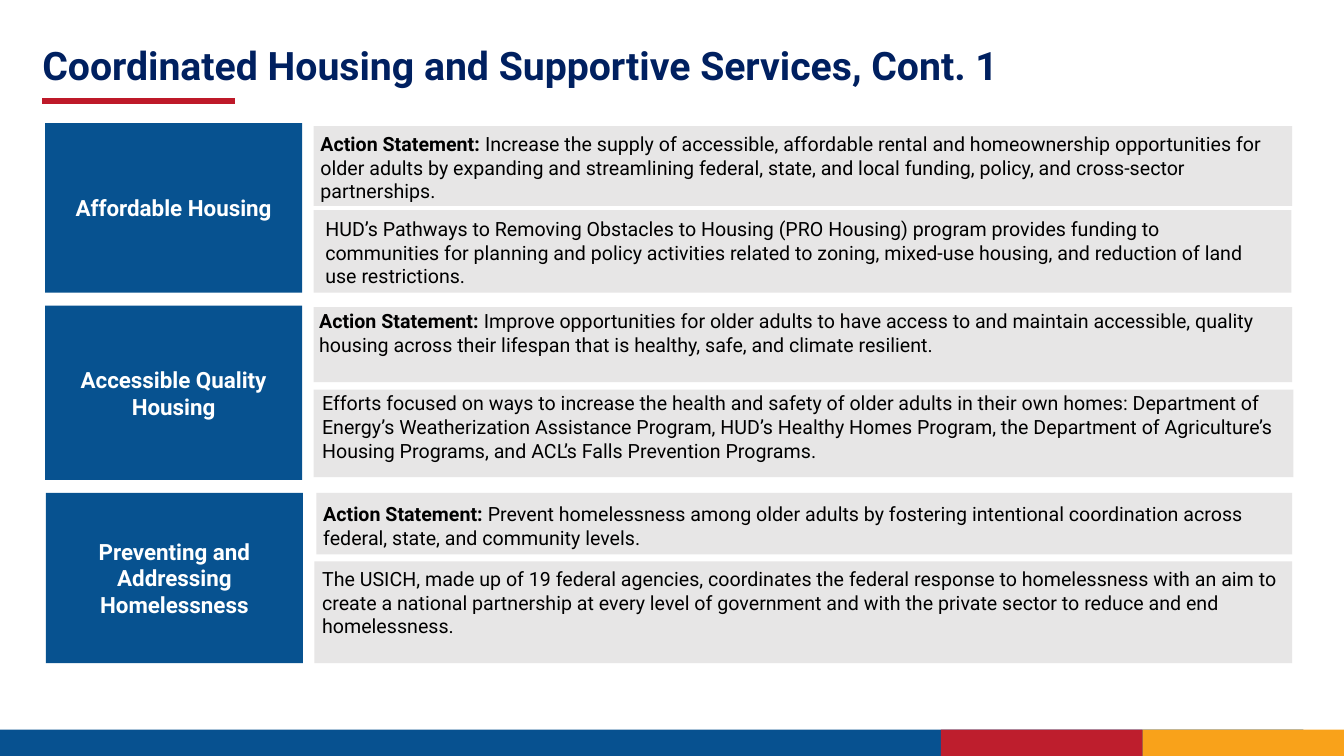
from dataclasses import dataclass
from typing import NamedTuple

from lxml import etree
from pptx import Presentation
from pptx.dml.color import RGBColor
from pptx.enum.shapes import MSO_CONNECTOR, MSO_SHAPE
from pptx.enum.text import MSO_ANCHOR, MSO_AUTO_SIZE, PP_ALIGN
from pptx.oxml.ns import qn
from pptx.shapes.autoshape import Shape
from pptx.slide import Slide
from pptx.text.text import Font
from pptx.util import Pt

RECTANGLE = MSO_SHAPE.RECTANGLE
STRAIGHT = MSO_CONNECTOR.STRAIGHT
MIDDLE = MSO_ANCHOR.MIDDLE
TOP = MSO_ANCHOR.TOP
CENTER = PP_ALIGN.CENTER
LEFT = PP_ALIGN.LEFT
NO_AUTOFIT = MSO_AUTO_SIZE.NONE
GROW_TO_FIT = MSO_AUTO_SIZE.SHAPE_TO_FIT_TEXT


@dataclass(frozen=True)
class Theme:
    font: str = "Roboto"
    title_size: float = 28
    label_size: float = 16
    body_size: float = 14
    title: str = "002060"
    underline: str = "BE1929"
    label: str = "075290"
    panel: str = "E7E6E6"
    footer_blue: str = "075190"
    footer_red: str = "BE1E2D"
    footer_gold: str = "F9A21A"
    white: str = "FFFFFF"
    black: str = "000000"


class Box(NamedTuple):
    """Left, top, width and height in points."""
    left: float
    top: float
    width: float
    height: float


@dataclass(frozen=True)
class Statement:
    panel: Box
    text_box: Box
    text: str
    lead: str = ""
    space_after: float = 0


@dataclass(frozen=True)
class Topic:
    label: str
    label_box: Box
    action: Statement
    example: Statement


THEME = Theme()
SLIDE_WIDTH, SLIDE_HEIGHT = 960, 540
ACTION_LEAD = "Action Statement: "
TITLE = "Coordinated Housing and Supportive Services, Cont. 1"
TITLE_BOX = Box(23, 15.1, 864, 66.2)
UNDERLINE_LEFT, UNDERLINE_RIGHT, UNDERLINE_TOP = 30.2, 168, 72

FOOTER_TOP, FOOTER_HEIGHT = 521.1, 19.2
FOOTER_BARS = [
    (0, 931, THEME.footer_blue),
    (816, 144, THEME.footer_gold),
    (672, 144, THEME.footer_red),
]

TOPICS = [
    Topic(
        "Affordable Housing",
        Box(32.2, 88, 183.6, 121),
        Statement(
            Box(224, 90, 699, 57), Box(221.8, 90.7, 695, 58.3),
            "Increase the supply of accessible, affordable rental and homeownership "
            "opportunities for older adults by expanding and streamlining federal, "
            "state, and local funding, policy, and cross-sector partnerships.",
            ACTION_LEAD),
        Statement(
            Box(224, 150, 698.4, 59), Box(225.3, 151.4, 695.5, 58.3),
            "HUD’s Pathways to Removing Obstacles to Housing (PRO Housing) program "
            "provides funding to communities for planning and policy activities "
            "related to zoning, mixed-use housing, and reduction of land use "
            "restrictions."),
    ),
    Topic(
        "Accessible Quality Housing",
        Box(32.2, 218.3, 183.6, 124.6),
        Statement(
            Box(224, 219.4, 699, 53.7), Box(220.9, 217.4, 700, 41),
            "Improve opportunities for older adults to have access to and maintain "
            "accessible, quality housing across their lifespan that is healthy, "
            "safe, and climate resilient.",
            ACTION_LEAD, space_after=6),
        Statement(
            Box(224, 278.4, 700, 62.4), Box(223, 276, 700.6, 58.3),
            "Efforts focused on ways to increase the health and safety of older "
            "adults in their own homes: Department of Energy’s Weatherization "
            "Assistance Program, HUD’s Healthy Homes Program, the Department of "
            "Agriculture’s Housing Programs, and ACL’s Falls Prevention Programs."),
    ),
    Topic(
        "Preventing and Addressing Homelessness",
        Box(32.8, 352, 183.6, 121.7),
        Statement(
            Box(226, 352, 697, 44), Box(223.8, 355, 697, 41),
            "Prevent homelessness among older adults by fostering intentional "
            "coordination across federal, state, and community levels.",
            ACTION_LEAD),
        Statement(
            Box(224.6, 401, 698.4, 72.7), Box(223, 401.6, 708.5, 58.3),
            "The USICH, made up of 19 federal agencies, coordinates the federal "
            "response to homelessness with an aim to create a national partnership "
            "at every level of government and with the private sector to reduce "
            "and end homelessness."),
    ),
]


def style_font(font: Font, size: float, color: str, bold: bool = False) -> None:
    font.name = THEME.font
    font.size = Pt(size)
    font.bold = bold
    font.color.rgb = RGBColor.from_string(color)


def add_rectangle(slide: Slide, box: Box, color: str) -> Shape:
    rectangle = slide.shapes.add_shape(RECTANGLE, *map(Pt, box))
    rectangle.shadow.inherit = False
    rectangle.fill.solid()
    rectangle.fill.fore_color.rgb = RGBColor.from_string(color)
    rectangle.line.fill.background()
    return rectangle


def add_title(slide: Slide) -> None:
    title = slide.shapes.title
    title.left, title.top, title.width, title.height = map(Pt, TITLE_BOX)
    frame = title.text_frame
    frame.text = TITLE
    frame.word_wrap = True
    frame.auto_size = NO_AUTOFIT
    frame.vertical_anchor = MIDDLE
    heading = frame.paragraphs[0]
    heading.alignment = LEFT
    heading.line_spacing = 0.9
    style_font(heading.runs[0].font, THEME.title_size, THEME.title, bold=True)


def add_underline(slide: Slide) -> None:
    underline = slide.shapes.add_connector(
        STRAIGHT, Pt(UNDERLINE_LEFT), Pt(UNDERLINE_TOP),
        Pt(UNDERLINE_RIGHT), Pt(UNDERLINE_TOP))
    underline.line.color.rgb = RGBColor.from_string(THEME.underline)
    underline.line.width = Pt(4.5)
    etree.SubElement(underline._element.spPr, qn("a:effectLst"))


def add_label(slide: Slide, topic: Topic) -> None:
    label = add_rectangle(slide, topic.label_box, THEME.label)
    frame = label.text_frame
    frame.text = topic.label
    frame.word_wrap = True
    frame.vertical_anchor = MIDDLE
    frame.paragraphs[0].alignment = CENTER
    style_font(frame.paragraphs[0].runs[0].font, THEME.label_size, THEME.white, bold=True)


def add_statement(slide: Slide, statement: Statement) -> None:
    add_rectangle(slide, statement.panel, THEME.panel)
    frame = slide.shapes.add_textbox(*map(Pt, statement.text_box)).text_frame
    frame.word_wrap = True
    frame.auto_size = GROW_TO_FIT
    frame.vertical_anchor = TOP
    paragraph = frame.paragraphs[0]
    paragraph.space_after = Pt(statement.space_after)
    for text, bold in ((statement.lead, True), (statement.text, False)):
        if text:
            run = paragraph.add_run()
            run.text = text
            style_font(run.font, THEME.body_size, THEME.black, bold)


def main() -> None:
    presentation = Presentation()
    presentation.slide_width, presentation.slide_height = Pt(SLIDE_WIDTH), Pt(SLIDE_HEIGHT)
    slide = presentation.slides.add_slide(presentation.slide_layouts[5])
    # Footer band
    for left, width, color in FOOTER_BARS:
        add_rectangle(slide, Box(left, FOOTER_TOP, width, FOOTER_HEIGHT), color)
    # Heading
    add_title(slide)
    add_underline(slide)
    # Topic rows
    for topic in TOPICS:
        add_label(slide, topic)
        add_statement(slide, topic.action)
        add_statement(slide, topic.example)
    presentation.save("out.pptx")


if __name__ == "__main__":
    main()
